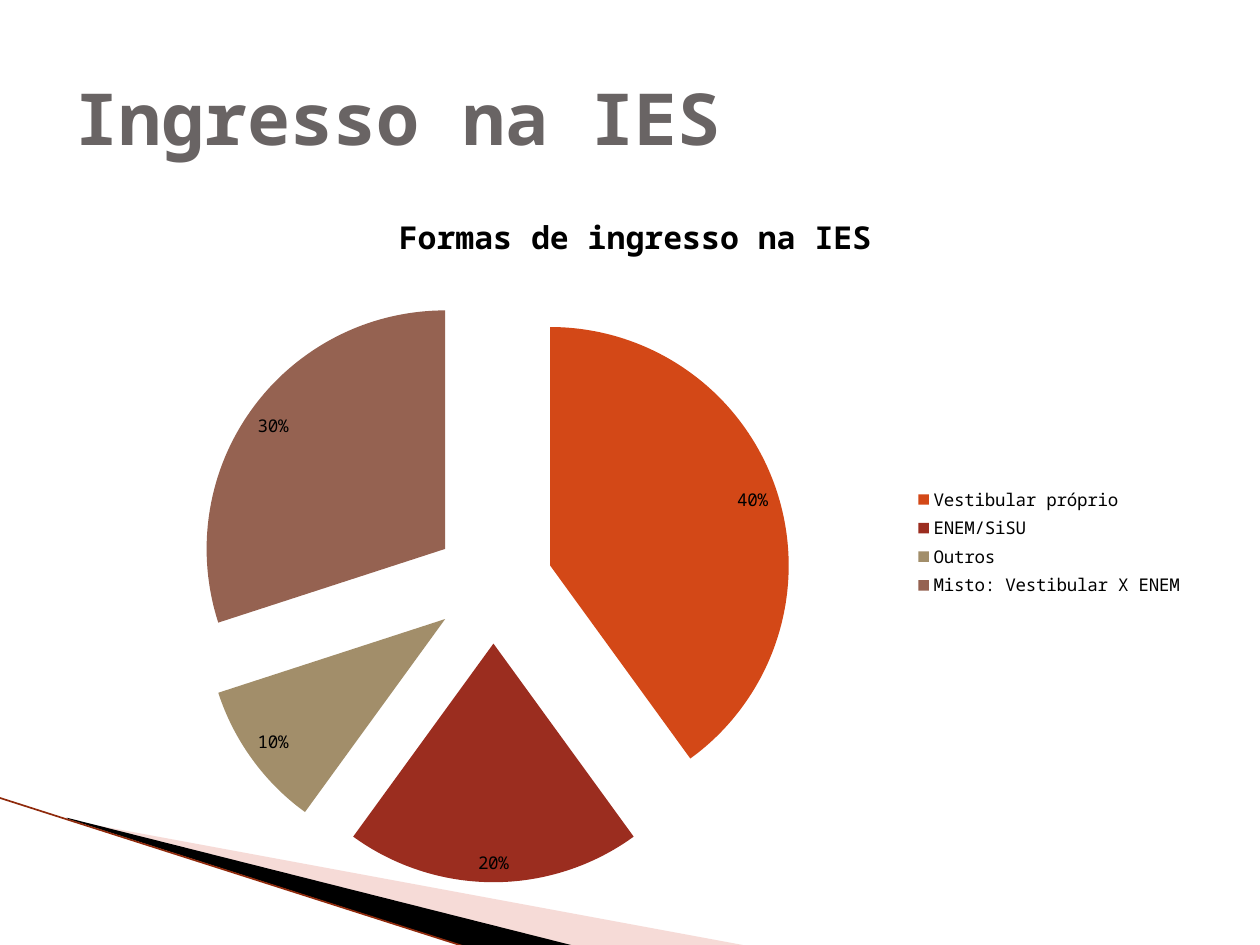
from lxml import etree
from pptx import Presentation
from pptx.chart.data import CategoryChartData
from pptx.dml.color import RGBColor
from pptx.enum import chart as ch, shapes as sh, text as tx
from pptx.oxml.ns import qn
from pptx.util import Inches, Pt

FONT = "Noto Sans Mono"
TITLE = "Ingresso na IES"
HEAD = "Formas de ingresso na IES"
SLICES = [
    ("Vestibular próprio", 40, "D34817"),
    ("ENEM/SiSU", 20, "9B2D1F"),
    ("Outros", 10, "A28E6A"),
    ("Misto: Vestibular X ENEM", 30, "956251"),
]
# points, colour, opacity in percent
WEDGES = [
    ([(0.55, 6.51), (5.95, 7.51), (4.56, 7.51), (0.55, 6.5)], "E9A59D", 40),
    ([(0.53, 6.49), (4.57, 7.51), (3.72, 7.52), (0.54, 6.5)], "000000", 100),
]
EDGE = [(-0.01, 6.33), (3.71, 7.52)]


def rgb(code):
    return RGBColor.from_string(code)


def style(font, size, color, bold=False):
    font.name, font.size, font.bold = FONT, Pt(size), bold
    font.color.rgb = rgb(color)


def add_wedge(slide, points, color, alpha):
    start, *rest = [(Inches(x), Inches(y)) for x, y in points]
    pen = slide.shapes.build_freeform(*start)
    pen.add_line_segments(rest, close=True)
    wedge = pen.convert_to_shape()
    wedge.shadow.inherit = False
    wedge.fill.solid()
    wedge.fill.fore_color.rgb = rgb(color)
    wedge.line.fill.background()
    if alpha < 100:
        tint = wedge.fill._xPr.find(qn("a:solidFill"))[0]
        etree.SubElement(tint, qn("a:alpha"), val=str(alpha * 1000))


def add_edge(slide):
    ends = [Inches(v) for point in EDGE for v in point]
    edge = slide.shapes.add_connector(sh.MSO_CONNECTOR.STRAIGHT, *ends)
    edge.line.color.rgb = rgb("8F2A0C")
    edge.line.width = Pt(0.95)
    etree.SubElement(edge._element.spPr, qn("a:effectLst"))


def add_title(slide):
    box = slide.shapes.add_textbox(*map(Inches, (0.5, 0.3, 9, 1.25)))
    frame = box.text_frame
    frame.word_wrap = True
    frame.vertical_anchor = tx.MSO_ANCHOR.MIDDLE
    run = frame.paragraphs[0].add_run()
    run.text = TITLE
    style(run.font, 41, "696464", True)


def add_pie(slide):
    data = CategoryChartData()
    data.categories = [name for name, _, _ in SLICES]
    data.add_series("Series 1", [value for _, value, _ in SLICES])
    area = map(Inches, (0.59, 1.47, 8.9, 5.67))
    chart = slide.shapes.add_chart(ch.XL_CHART_TYPE.PIE, *area, data).chart
    style(chart.font, 10, "000000")

    chart.has_title = True
    run = chart.chart_title.text_frame.paragraphs[0].add_run()
    run.text = HEAD
    style(run.font, 18, "000000", True)
    chart.chart_title.include_in_layout = False

    chart.has_legend = True
    chart.legend.position = ch.XL_LEGEND_POSITION.RIGHT
    chart.legend.include_in_layout = False

    plot = chart.plots[0]
    plot.vary_by_categories = True
    plot.has_data_labels = True
    labels = plot.data_labels
    labels.show_percentage, labels.show_value = True, False
    labels.number_format, labels.number_format_is_linked = "0%", False
    labels.position = ch.XL_LABEL_POSITION.BEST_FIT
    style(labels.font, 10, "000000")

    series = plot.series[0]
    for i, (_, _, color) in enumerate(SLICES):
        fill = series.points[i].format.fill
        fill.solid()
        fill.fore_color.rgb = rgb(color)
    burst = etree.Element(qn("c:explosion"), val="25")
    series._element.find(qn("c:dPt")).addprevious(burst)


def main():
    deck = Presentation()
    deck.slide_width, deck.slide_height = Inches(10), Inches(7.5)
    slide = deck.slides.add_slide(deck.slide_layouts[6])
    for wedge in WEDGES:
        add_wedge(slide, *wedge)
    add_edge(slide)
    add_title(slide)
    add_pie(slide)
    deck.save("out.pptx")


if __name__ == "__main__":
    main()
